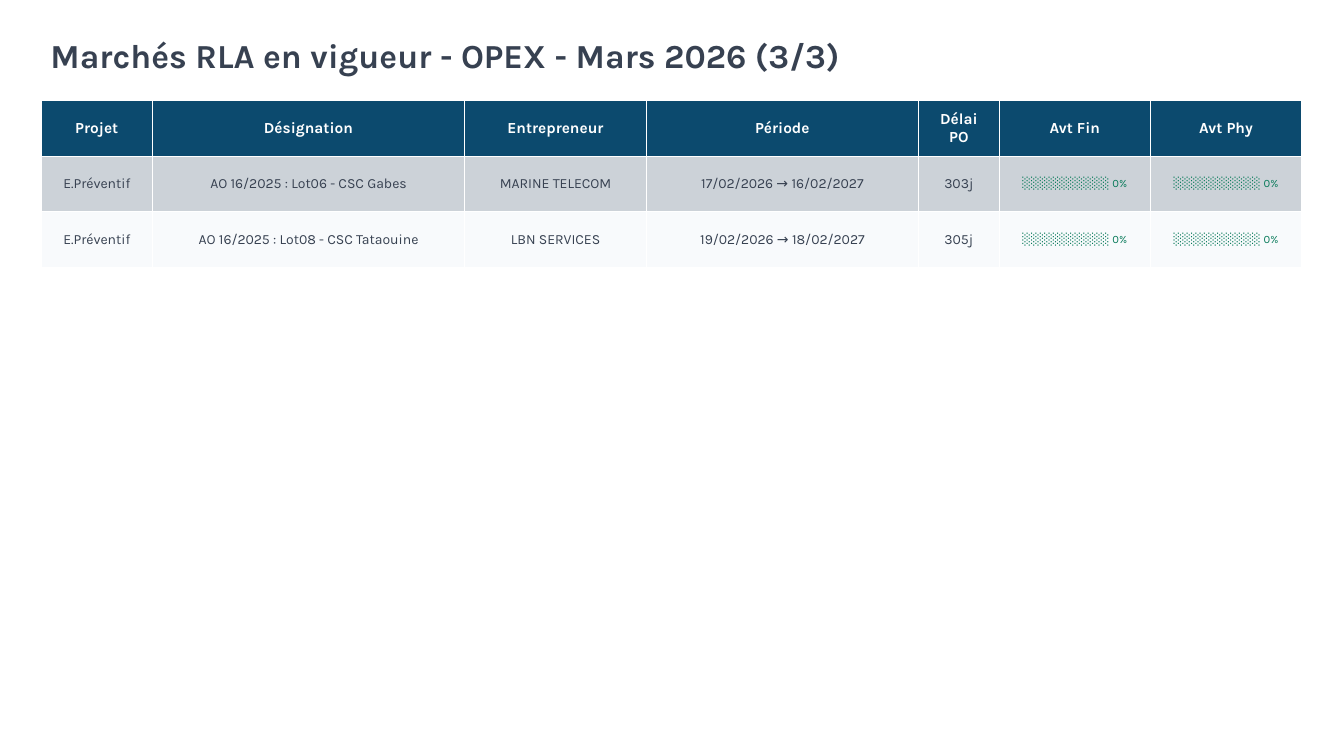
from pptx import Presentation
from pptx.dml.color import RGBColor
from pptx.enum.text import MSO_ANCHOR as Anchor, PP_ALIGN as Align
from pptx.util import Inches, Pt

PROGRESS = "░░░░░░░░░░ 0%"
HEADINGS = ["Projet", "Désignation", "Entrepreneur", "Période", "Délai PO", "Avt Fin", "Avt Phy"]
CONTRACTS = [
    ["E.Préventif", "AO 16/2025 : Lot06 - CSC Gabes", "MARINE TELECOM",
     "17/02/2026 → 16/02/2027", "303j", PROGRESS, PROGRESS],
    ["E.Préventif", "AO 16/2025 : Lot08 - CSC Tataouine", "LBN SERVICES",
     "19/02/2026 → 18/02/2027", "305j", PROGRESS, PROGRESS],
]
COLUMN_WIDTHS = [1.1, 3.1, 1.8, 2.7, 0.8, 1.5, 1.5]
ROW_HEIGHT = 0.55


def color(code):
    return RGBColor.from_string(code)


class MarketSlide:
    font = "Karla"
    ink = "374151"
    white = "FFFFFF"
    header_fill = "0C4A6E"
    row_fills = ["CCD2D8", "F8FAFC"]
    progress_ink = "047857"

    def __init__(self, deck):
        self.slide = deck.slides.add_slide(deck.slide_layouts[5])
        self.slide.background.fill.solid()
        self.slide.background.fill.fore_color.rgb = color(self.white)

    def set_text(self, frame, text, size, ink, bold, align):
        frame.text = text
        paragraph = frame.paragraphs[0]
        paragraph.alignment = align
        for run in paragraph.runs:
            run.font.name = self.font
            run.font.size = Pt(size)
            run.font.bold = bold
            run.font.color.rgb = color(ink)

    def title(self, text, left, top, width, height):
        heading = self.slide.shapes.title
        heading.left, heading.top = Inches(left), Inches(top)
        heading.width, heading.height = Inches(width), Inches(height)
        heading.text_frame.vertical_anchor = Anchor.TOP
        self.set_text(heading.text_frame, text, 24, self.ink, True, Align.LEFT)

    def cell(self, cell, text, fill, size, ink, bold=False):
        cell.fill.solid()
        cell.fill.fore_color.rgb = color(fill)
        cell.vertical_anchor = Anchor.MIDDLE
        self.set_text(cell.text_frame, text, size, ink, bold, Align.CENTER)

    def table(self, headings, contracts, left, top):
        row_count = len(contracts) + 1
        markets = self.slide.shapes.add_table(
            row_count, len(headings), Inches(left), Inches(top),
            Inches(sum(COLUMN_WIDTHS)), Inches(ROW_HEIGHT * row_count)).table
        for column, width in zip(markets.columns, COLUMN_WIDTHS):
            column.width = Inches(width)
        for row in markets.rows:
            row.height = Inches(ROW_HEIGHT)
        for c, heading in enumerate(headings):
            self.cell(markets.cell(0, c), heading, self.header_fill, 11, self.white, True)
        for r, contract in enumerate(contracts):
            fill = self.row_fills[r % 2]
            for c, text in enumerate(contract):
                size, ink = (8, self.progress_ink) if text == PROGRESS else (10, self.ink)
                self.cell(markets.cell(r + 1, c), text, fill, size, ink)


def main():
    deck = Presentation()
    deck.slide_width, deck.slide_height = Inches(13.33), Inches(7.5)
    page = MarketSlide(deck)
    page.title("Marchés RLA en vigueur - OPEX - Mars 2026 (3/3)", 0.4, 0.3, 12, 0.6)
    page.table(HEADINGS, CONTRACTS, 0.41, 1)
    deck.save("out.pptx")


if __name__ == "__main__":
    main()
